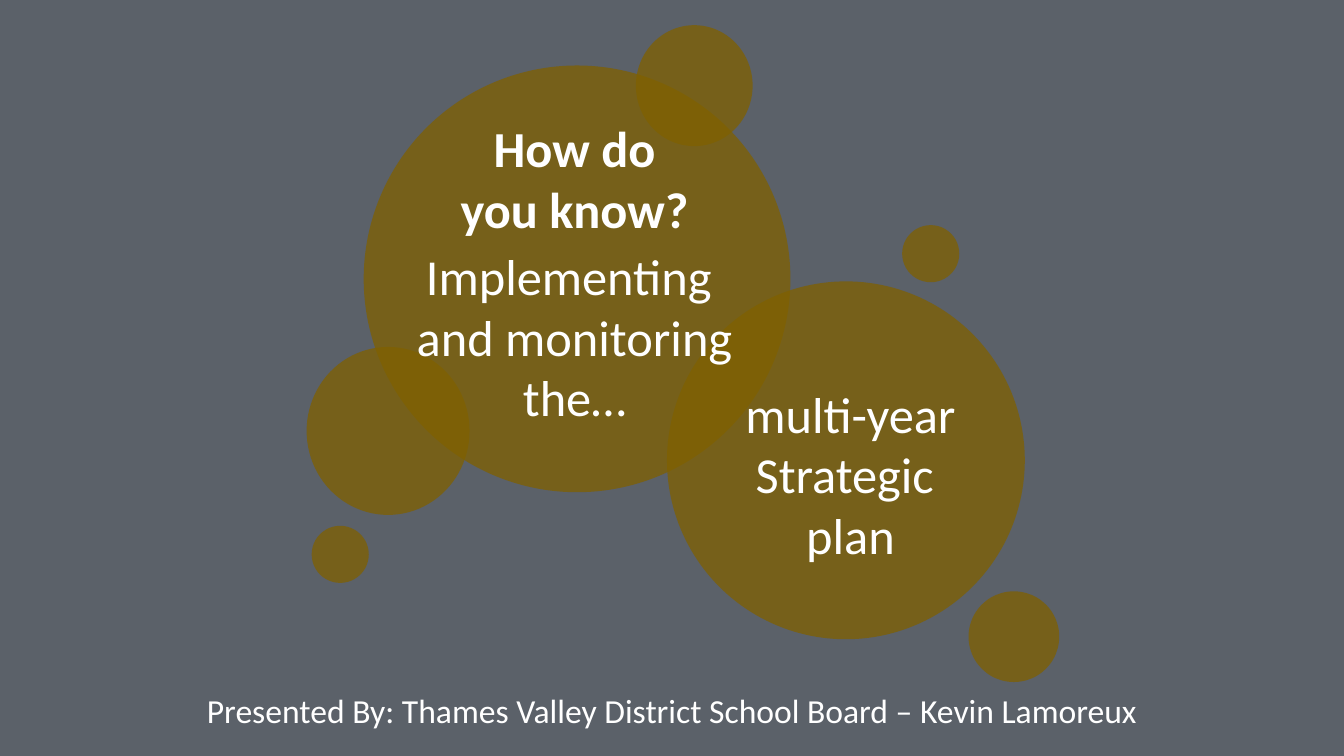
"""Build a title slide of overlapping translucent bubbles on a 16 by 9 grid."""
from dataclasses import dataclass

from lxml import etree
from pptx import Presentation, util as u
from pptx.dml.color import RGBColor
from pptx.enum import shapes, text
from pptx.oxml import ns


@dataclass(frozen=True)
class Theme:
    """Colours, opacity and type sizes of the slide."""
    backdrop: str = "222A35"
    bubble: str = "806000"
    ink: str = "FFFFFF"
    backdrop_opacity: int = 74
    bubble_opacity: int = 75
    font: str = "Calibri"
    headline: int = 36
    credit: int = 24
    lead_gap: int = 5


class BubbleSlide:
    """Place bubbles and centred lines by column and row."""
    columns, rows = 16, 9

    def __init__(self, deck, theme):
        """Add a blank slide to the deck."""
        self.theme = theme
        self.column = deck.slide_width / self.columns
        self.row = deck.slide_height / self.rows
        self.slide = deck.slides.add_slide(deck.slide_layouts[6])

    def place(self, left, top, width, height):
        """Turn grid cells into slide lengths."""
        return (round(left * self.column), round(top * self.row),
                round(width * self.column), round(height * self.row))

    def tinted(self, preset, area, colour, opacity):
        """Add a borderless translucent shape."""
        tint = self.slide.shapes.add_shape(preset, *self.place(*area))
        tint.shadow.inherit = False
        tint.line.fill.background()
        tint.fill.solid()
        tint.fill.fore_color.rgb = RGBColor.from_string(colour)
        shade = tint.fill._xPr.find(".//" + ns.qn("a:srgbClr"))
        etree.SubElement(shade, ns.qn("a:alpha"), val=str(opacity * 1000))

    def backdrop(self):
        """Cover the whole slide."""
        self.tinted(shapes.MSO_SHAPE.RECTANGLE, (0, 0, self.columns, self.rows),
                    self.theme.backdrop, self.theme.backdrop_opacity)

    def bubble(self, left, top, width, height=None):
        """Add a bubble, round unless a height is given."""
        self.tinted(shapes.MSO_SHAPE.OVAL, (left, top, width, height or width),
                    self.theme.bubble, self.theme.bubble_opacity)

    def lines(self, area, wording, size, bold_count=0):
        """Add centred lines, the first bold_count of them bold."""
        frame = self.slide.shapes.add_textbox(*self.place(*area)).text_frame
        frame.word_wrap = True
        frame.auto_size = text.MSO_AUTO_SIZE.SHAPE_TO_FIT_TEXT
        for index, words in enumerate(wording):
            line = frame.add_paragraph() if index else frame.paragraphs[0]
            line.alignment = text.PP_ALIGN.CENTER
            if index and index == bold_count:
                line.space_before = u.Pt(self.theme.lead_gap)
            run = line.add_run()
            run.text = words
            run.font.name = self.theme.font
            run.font.size = u.Pt(size)
            run.font.bold = index < bold_count
            run.font.color.rgb = RGBColor.from_string(self.theme.ink)


def main():
    """Compose and save the slide."""
    deck = Presentation()
    deck.slide_width, deck.slide_height = u.Inches(13.33), u.Inches(7.5)
    theme = Theme()
    cover = BubbleSlide(deck, theme)
    cover.backdrop()
    for bubble in (
        (3.65, 4.13, 1.94, 2),
        (4.33, 0.78, 5.08),
        (7.94, 3.35, 4.26),
        (3.71, 6.26, 0.68),
        (7.57, 0.3, 1.39, 1.44),
        (11.53, 7.04, 1.08),
        (10.74, 2.68, 0.68),
    ):
        cover.bubble(*bubble)
    cover.lines((4.33, 1.34, 5.02, 3.84),
                ("How do", "you know?", "Implementing ", "and monitoring", "the…"),
                theme.headline, bold_count=2)
    cover.lines((8.26, 4.5, 3.73, 2.3),
                ("multi-year", "Strategic ", "plan"), theme.headline)
    cover.lines((0, 8.15, 16, 0.6),
                ("Presented By: Thames Valley District School Board – Kevin Lamoreux",),
                theme.credit)
    deck.save("out.pptx")


if __name__ == "__main__":
    main()
